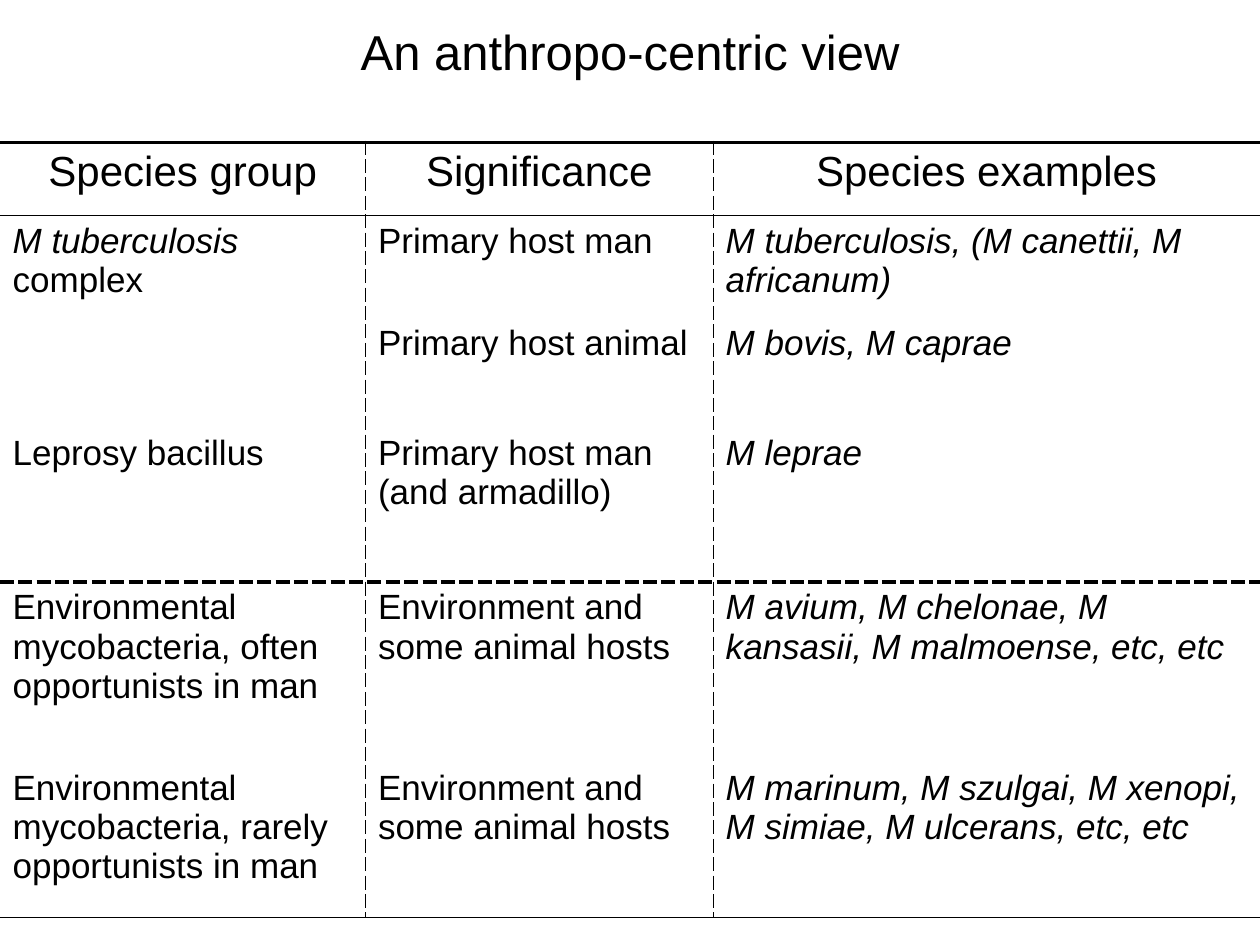
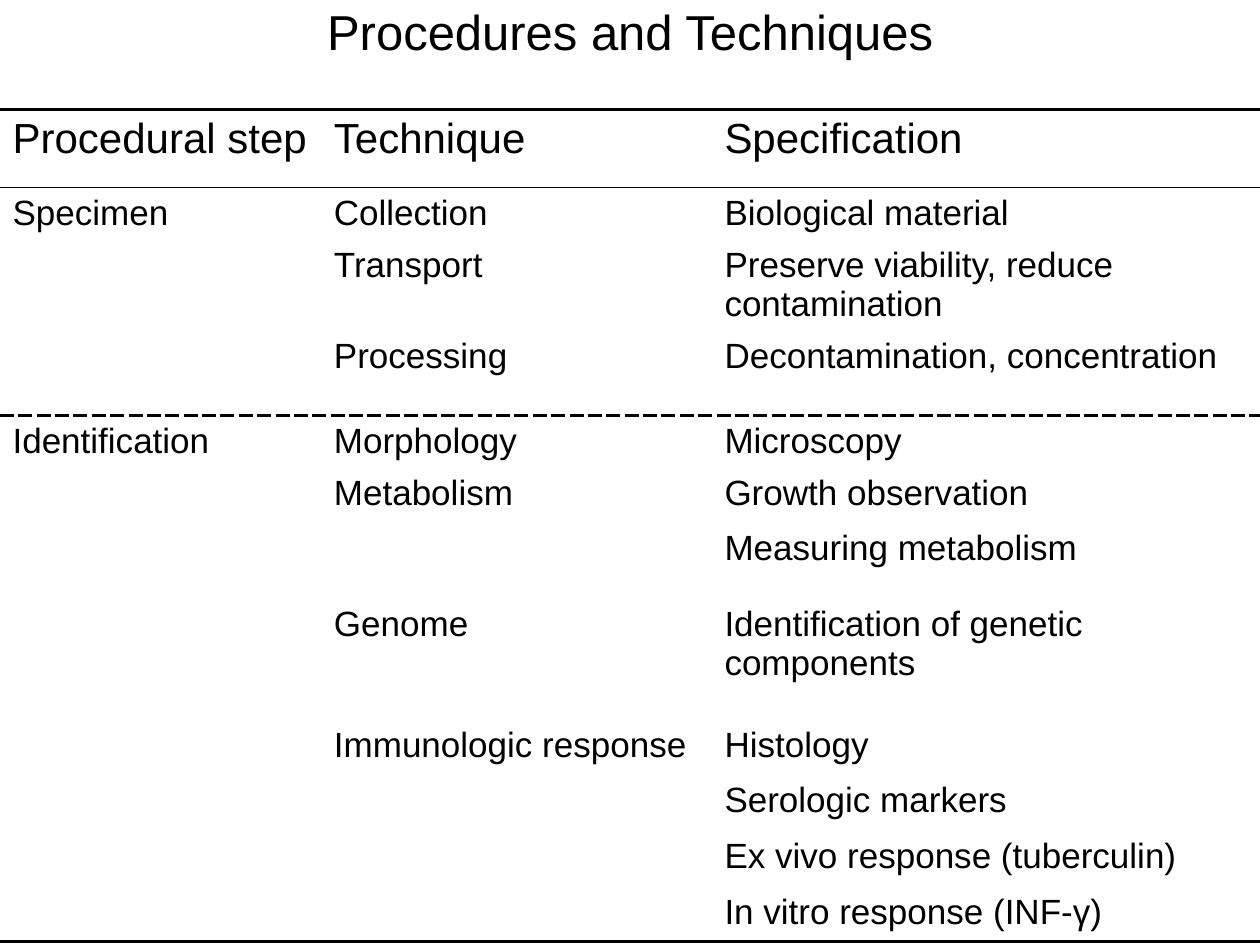
from lxml.etree import SubElement
from pptx import Presentation
from pptx.dml.color import RGBColor
from pptx.enum.text import PP_ALIGN
from pptx.oxml.ns import qn
from pptx.util import Inches, Pt

COLORS = {"ink": "000000"}
FONT = "Arial"
TITLE_SIZE, HEADER_SIZE, BODY_SIZE = 28, 24, 20

# Rule styles: width in points, dash
HEAVY, THIN = (2.25, "solid"), (0.5, "solid")
HEAVY_DASH, THIN_DASH = (2.25, "sysDash"), (0.5, "sysDash")

# Text between asterisks is italic. A key in "rules" is the number of rows above the line.
SLIDES = [
    {
        "title": "An anthropo-centric view",
        "header": ["Species group", "Significance", "Species examples"],
        "header_align": PP_ALIGN.CENTER,
        "body": [
            ["*M tuberculosis* complex", "Primary host man",
             "*M tuberculosis, (M canettii, M africanum)*"],
            ["", "Primary host animal", "*M bovis, M caprae*"],
            ["Leprosy bacillus", "Primary host man (and armadillo)", "*M leprae*"],
            ["Environmental mycobacteria, often opportunists in man",
             "Environment and some animal hosts",
             "*M avium, M chelonae, M kansasii, M malmoense, etc, etc*"],
            ["Environmental mycobacteria, rarely opportunists in man",
             "Environment and some animal hosts",
             "*M marinum, M szulgai, M xenopi, M simiae, M ulcerans, etc, etc*"],
        ],
        "top": 0.16,
        "height": 7.11,
        "cols": [2.9, 2.76, 4.34],
        "rows": [0.97, 0.58, 0.81, 0.87, 1.23, 1.43, 1.23],
        "rules": {1: HEAVY, 2: THIN, 5: HEAVY_DASH, 7: THIN},
        "divider": THIN_DASH,
    },
    {
        "title": "Procedures and Techniques",
        "header": ["Procedural step", "Technique", "Specification"],
        "header_align": PP_ALIGN.LEFT,
        "body": [
            ["Specimen", "Collection", "Biological material"],
            ["", "Transport", "Preserve viability, reduce contamination"],
            ["", "Processing", "Decontamination, concentration"],
            ["Identification", "Morphology", "Microscopy"],
            ["", "Metabolism", "Growth observation"],
            ["", "", "Measuring metabolism"],
            ["", "Genome", "Identification of genetic components"],
            ["", "Immunologic response", "Histology"],
            ["", "", "Serologic markers"],
            ["", "", "Ex vivo response (tuberculin)"],
            ["", "", "In vitro response (INF-γ)"],
        ],
        "top": 0,
        "height": 7.53,
        "cols": [2.55, 3.1, 4.35],
        "rows": [0.87, 0.62, 0.2, 0.25, 0.68, 0.2, 0.29, 0.6, 0.96, 0.35, 0.43, 0.43, 0.2],
        "rules": {1: HEAVY, 2: THIN, 5: HEAVY_DASH, 13: HEAVY},
        "divider": None,
    },
]


def write(cell, text, size, align):
    p = cell.text_frame.paragraphs[0]
    p.alignment = align
    p.font.size = Pt(size)
    for i, part in enumerate(text.split("*")):
        if not part:
            continue
        r = p.add_run()
        r.text = part
        look = {"name": FONT, "size": Pt(size), "bold": False, "italic": i % 2 == 1}
        for name, value in look.items():
            setattr(r.font, name, value)
        r.font.color.rgb = RGBColor.from_string(COLORS["ink"])


def set_borders(cell, borders):
    """Draw the given sides; a side whose rule is None gets no line."""
    tcPr = cell._tc.get_or_add_tcPr()
    for side in "LRTB":
        rule = borders[side]
        ln = SubElement(tcPr, qn(f"a:ln{side}"))
        if rule is None:
            SubElement(ln, qn("a:noFill"))
            continue
        width, dash = rule
        ln.set("w", str(Pt(width)))
        fill = SubElement(ln, qn("a:solidFill"))
        SubElement(fill, qn("a:srgbClr"), val=COLORS["ink"])
        SubElement(ln, qn("a:prstDash"), val=dash)
    cell.fill.background()


def add_ruled_table(s, data):
    cols, rows, rules = data["cols"], data["rows"], data["rules"]
    frame = s.shapes.add_table(len(rows), len(cols), 0, Inches(data["top"]),
                               Inches(sum(cols)), Inches(data["height"]))
    table = frame.table
    table.first_row = table.horz_banding = False
    for column, width in zip(table.columns, cols):
        column.width = Inches(width)
    for row, height in zip(table.rows, rows):
        row.height = Inches(height)
    frame.height = Inches(data["height"])

    table.cell(0, 0).merge(table.cell(0, len(cols) - 1))
    write(table.cell(0, 0), data["title"], TITLE_SIZE, PP_ALIGN.CENTER)
    for r, texts in enumerate([data["header"]] + data["body"], start=1):
        size, align = ((HEADER_SIZE, data["header_align"]) if r == 1
                       else (BODY_SIZE, PP_ALIGN.LEFT))
        for c, text in enumerate(texts):
            write(table.cell(r, c), text, size, align)

    for r in range(len(rows)):
        divider = data["divider"] if r else None
        for c in range(len(cols)):
            set_borders(table.cell(r, c), {
                "L": divider if c else None,
                "R": divider if c < len(cols) - 1 else None,
                "T": rules.get(r),
                "B": rules.get(r + 1),
            })


def main():
    prs = Presentation()
    prs.slide_width, prs.slide_height = Inches(10), Inches(7.5)
    for data in SLIDES:
        add_ruled_table(prs.slides.add_slide(prs.slide_layouts[6]), data)
    prs.save("out.pptx")


if __name__ == "__main__":
    main()
